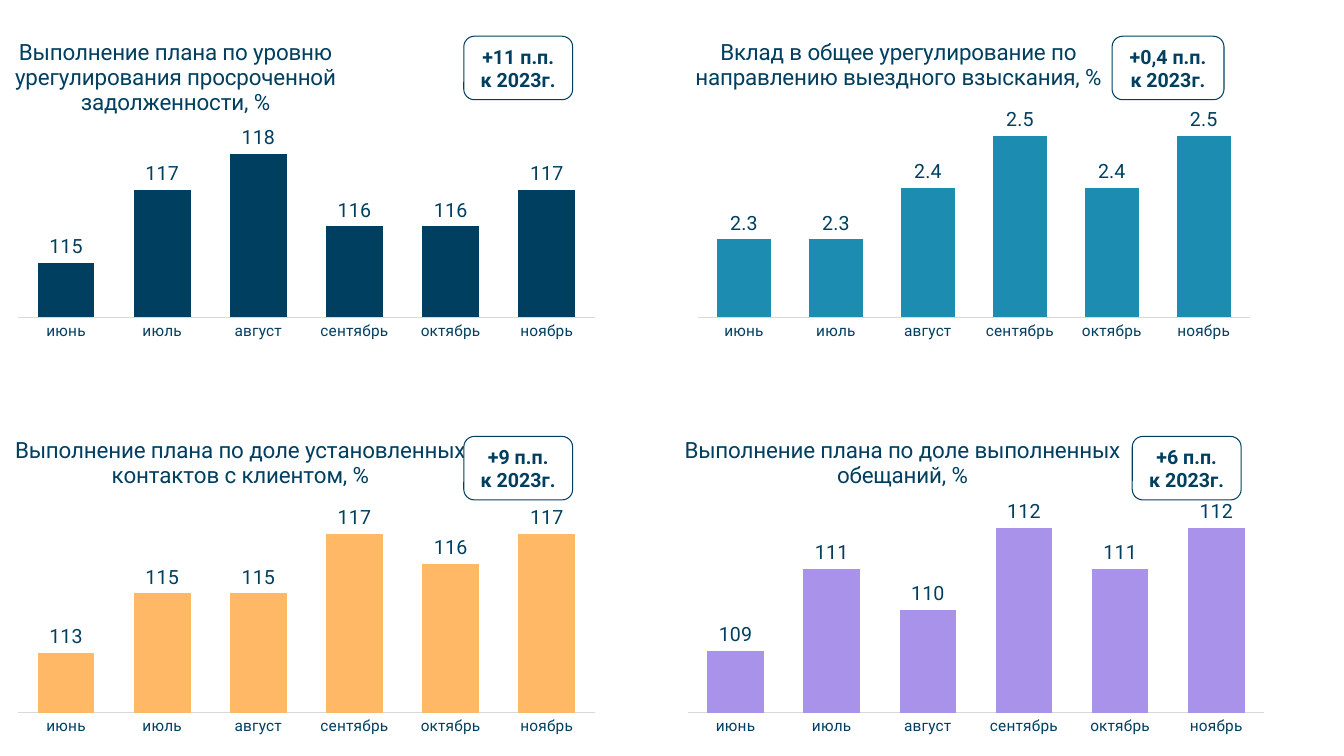
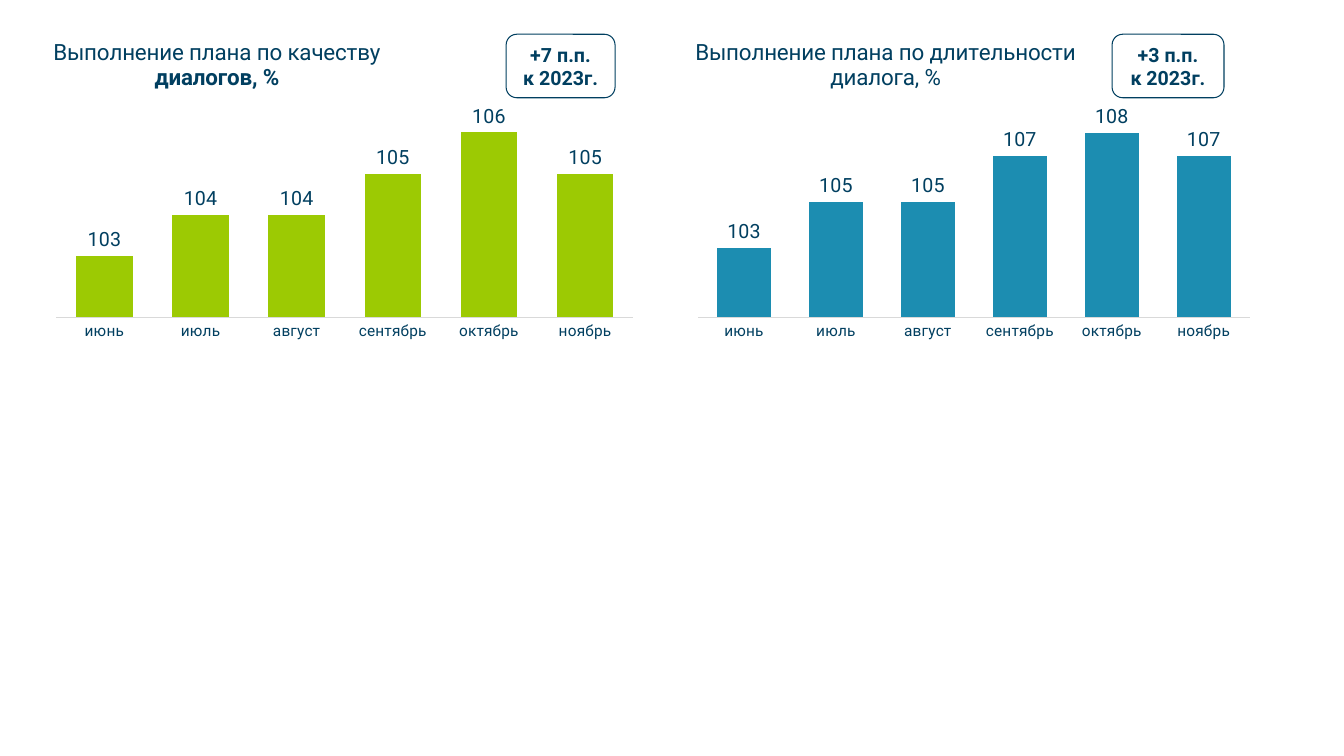
import pptx
import pptx.util
import pptx.oxml
import pptx.oxml.ns
import pptx.dml.color
import pptx.chart.data
import pptx.enum.chart
import pptx.enum.shapes
import pptx.enum.text

Inches = pptx.util.Inches
Pt = pptx.util.Pt

NAVY, BLUE, AMBER, LILAC, LIME = "013F60", "1C8DB1", "FFB966", "A993EA", "9CCA03"
WHITE, GREY = "FFFFFF", "D9D9D9"
MONTHS = ["июнь", "июль", "август", "сентябрь", "октябрь", "ноябрь"]
BASE = 0.91  # category axis, as a share of the chart height


def color(text):
    return pptx.dml.color.RGBColor.from_string(text)


def place(node, index, **parts):
    """Give a chart part a manual layout, in shares of the chart."""
    tag = pptx.oxml.ns.qn("c:layout")
    for old in node.findall(tag):
        node.remove(old)
    modes = '<c:xMode val="edge"/><c:yMode val="edge"/>'
    if "w" in parts:
        modes = '<c:layoutTarget val="inner"/>' + modes
    sizes = "".join(f'<c:{key} val="{val:.3f}"/>' for key, val in parts.items())
    node.insert(index, pptx.oxml.parse_xml(
        f'<c:layout {pptx.oxml.ns.nsdecls("c")}>'
        f"<c:manualLayout>{modes}{sizes}</c:manualLayout></c:layout>"))


class Deck:
    """Holds the style and the current slide."""
    face, ink = "Roboto", NAVY

    def __init__(self):
        self.show = pptx.Presentation()
        self.show.slide_width = Inches(13.33)
        self.show.slide_height = Inches(7.5)

    def page(self):
        self.slide = self.show.slides.add_slide(self.show.slide_layouts[6])

    def style(self, font, size, bold=False):
        font.name, font.size, font.bold = self.face, Pt(size), bold
        font.color.rgb = color(self.ink)

    def text(self, frame, lines, size, bold=False):
        """Add centred lines; a leading * makes a line bold."""
        for i, line in enumerate(lines):
            para = frame.add_paragraph() if i else frame.paragraphs[0]
            para.alignment = pptx.enum.text.PP_ALIGN.CENTER
            run = para.add_run()
            run.text = line.lstrip("*")
            self.style(run.font, size, bold or line.startswith("*"))

    def badge(self, left, top, width, gain):
        box = self.slide.shapes.add_shape(
            pptx.enum.shapes.MSO_SHAPE.ROUNDED_RECTANGLE,
            Inches(left), Inches(top), Inches(width), Inches(0.63))
        box.shadow.inherit = False
        box.fill.solid()
        box.fill.fore_color.rgb = color(WHITE)
        box.line.color.rgb = color(self.ink)
        box.line.width = Pt(0.75)
        frame = box.text_frame
        frame.word_wrap = True
        frame.vertical_anchor = pptx.enum.text.MSO_ANCHOR.MIDDLE
        self.text(frame, [f"+{gain} п.п.", "к 2023г."], 14, True)

    def chart(self, left, top, width, title, head, fill, values, low, high, peak):
        """Draw columns; head is the title corner, peak the plot top (shares)."""
        kinds = pptx.enum.chart
        data = pptx.chart.data.CategoryChartData()
        data.categories = MONTHS
        data.add_series("Series 1", values)
        chart = self.slide.shapes.add_chart(
            kinds.XL_CHART_TYPE.COLUMN_CLUSTERED, Inches(left), Inches(top),
            Inches(width), Inches(3.11), data).chart
        self.style(chart.font, 14)
        chart.has_legend = False

        chart.has_title = True
        self.text(chart.chart_title.text_frame, title, 16)
        place(chart.chart_title._element, 1, x=head[0], y=head[1])
        area = chart._chartSpace.chart.plotArea
        place(area, 0, x=0.02, y=peak, w=0.96, h=BASE - peak)

        axis = chart.category_axis
        axis.major_tick_mark = kinds.XL_TICK_MARK.NONE
        axis.format.line.color.rgb = color(GREY)
        axis.format.line.width = Pt(0.75)
        self.style(axis.tick_labels.font, 11)
        scale = chart.value_axis
        scale.has_major_gridlines = False
        scale.minimum_scale, scale.maximum_scale = low, high
        scale.visible = False

        plot = chart.plots[0]
        plot.gap_width, plot.overlap = 70, 14
        plot.vary_by_categories = False
        plot.has_data_labels = True
        labels = plot.data_labels
        labels.show_value = True
        labels.position = kinds.XL_LABEL_POSITION.OUTSIDE_END
        self.style(labels.font, 14)
        bars = plot.series[0].format.fill
        bars.solid()
        bars.fore_color.rgb = color(fill)


UPPER, LOWER = 0.32, 4.24
WIDE, SLIM = 5.96, 5.7
PAGES = [
    ([(0.06, UPPER, WIDE,
       ["Выполнение плана по уровню", "урегулирования просроченной", "задолженности, %"],
       (0.01, 0.01), NAVY, [115, 117, 118, 116, 116, 117], 113.5, 118.5, 0.33),
      (6.81, UPPER, SLIM,
       ["Вклад в общее урегулирование по", "направлению выездного взыскания, %"],
       (0.01, 0.01), BLUE, [2.3, 2.3, 2.4, 2.5, 2.4, 2.5], 2.15, 2.5, 0.33),
      (0.06, LOWER, WIDE,
       ["Выполнение плана по доле установленных", "контактов с клиентом, %"],
       (0.01, 0.02), AMBER, [113, 115, 115, 117, 116, 117], 111, 117, 0.34),
      (6.7, LOWER, WIDE,
       ["Выполнение плана по доле выполненных", "обещаний, %"],
       (0.01, 0.02), LILAC, [109, 111, 110, 112, 111, 112], 107.5, 112, 0.32)],
     [(4.6, 0.36, 1.08, "11"), (11.03, 0.36, 1.11, "0,4"),
      (4.6, 4.33, 1.08, "9"), (11.23, 4.33, 1.08, "6")]),
    ([(0.44, UPPER, WIDE,
       ["Выполнение плана по качеству", "*диалогов, %"],
       (0.01, 0.01), LIME, [103, 104, 104, 105, 106, 105], 101.5, 106, 0.32),
      (6.81, UPPER, SLIM,
       ["Выполнение плана по длительности", "диалога, %"],
       (0.01, 0.01), BLUE, [103, 105, 105, 107, 108, 107], 100, 108, 0.32)],
     [(5.02, 0.34, 1.08, "7"), (11.03, 0.34, 1.11, "3")]),
]


def main():
    deck = Deck()
    for charts, badges in PAGES:
        deck.page()
        for chart in charts:
            deck.chart(*chart)
        for badge in badges:
            deck.badge(*badge)
    deck.show.save("out.pptx")


if __name__ == "__main__":
    main()
